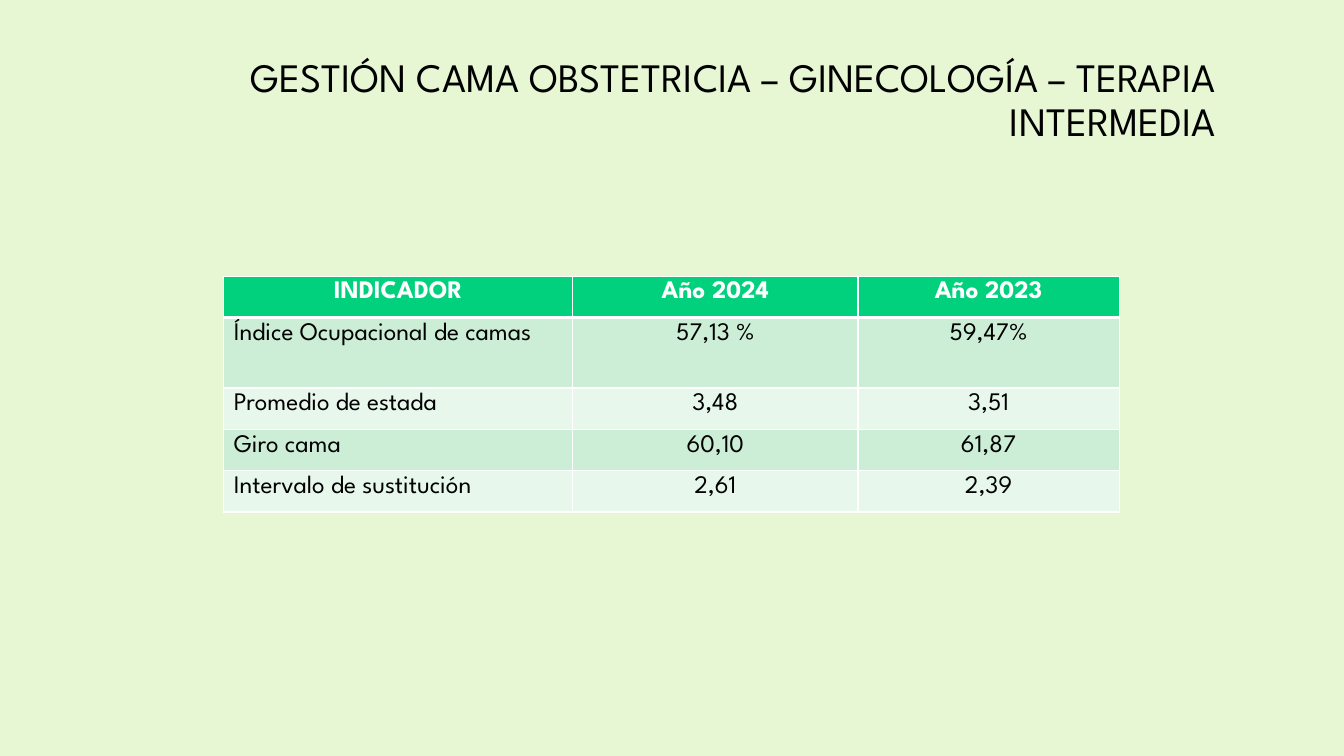
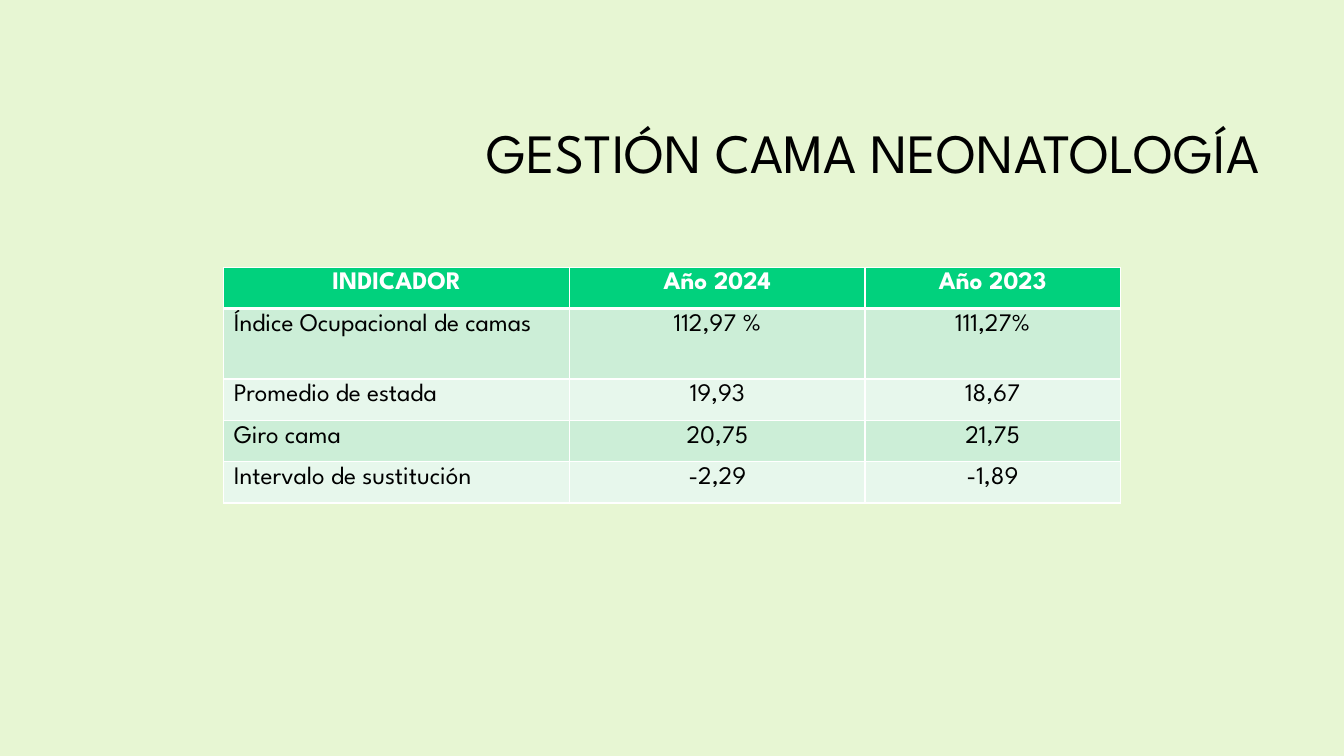
from lxml import etree
from pptx import Presentation
from pptx.dml.color import RGBColor
from pptx.enum.text import MSO_ANCHOR, MSO_AUTO_SIZE, PP_ALIGN
from pptx.oxml.ns import qn
from pptx.util import Inches, Pt

LEFT, CENTER, RIGHT = PP_ALIGN.LEFT, PP_ALIGN.CENTER, PP_ALIGN.RIGHT
MIDDLE = MSO_ANCHOR.MIDDLE
NO_AUTOFIT = MSO_AUTO_SIZE.NONE
TITLE_ONLY = 5

FONT = "League Spartan"
BACKGROUND = "E7F6D3"
HEADER = "01D17D"
BANDS = ("CCEED7", "E7F7EC")
WHITE = "FFFFFF"
BLACK = "000000"

YEARS = ("Año 2024", "Año 2023")
INDICATORS = (
    "Índice Ocupacional de camas",
    "Promedio de estada",
    "Giro cama",
    "Intervalo de sustitución",
)
ROW_HEIGHTS = (0.41, 0.7, 0.41, 0.41, 0.41)
TABLE_LEFT = 2.22


def color(hex_code):
    return RGBColor.from_string(hex_code)


def write(frame, text, size=18, ink=BLACK, bold=False, align=LEFT, spacing=None):
    paragraph = frame.paragraphs[0]
    paragraph.alignment = align
    paragraph.line_spacing = spacing
    run = paragraph.add_run()
    run.text = text
    run.font.name = FONT
    run.font.size = Pt(size)
    run.font.bold = bold
    run.font.color.rgb = color(ink)


def set_border(cell, side, points):
    properties = cell._tc.get_or_add_tcPr()
    line = etree.SubElement(properties, qn(f"a:ln{side}"), w=str(Pt(points)))
    fill = etree.SubElement(line, qn("a:solidFill"))
    etree.SubElement(fill, qn("a:srgbClr"), val=WHITE)


class Deck:
    def __init__(self):
        self.presentation = Presentation()
        self.presentation.slide_width = Inches(13.33)
        self.presentation.slide_height = Inches(7.5)
        self.slide = None

    def add_slide(self):
        layout = self.presentation.slide_layouts[TITLE_ONLY]
        self.slide = self.presentation.slides.add_slide(layout)
        fill = self.slide.background.fill
        fill.solid()
        fill.fore_color.rgb = color(BACKGROUND)

    def add_title(self, text, box, size):
        title = self.slide.shapes.title
        title.left, title.top, title.width, title.height = map(Inches, box)
        frame = title.text_frame
        frame.auto_size = NO_AUTOFIT
        frame.word_wrap = True
        frame.vertical_anchor = MIDDLE
        write(frame, text, size=size, align=RIGHT, spacing=0.9)

    def add_indicators(self, top, widths, values):
        rows = [("INDICADOR", *YEARS)]
        rows += [(name, *pair) for name, pair in zip(INDICATORS, values)]
        table = self.slide.shapes.add_table(
            len(rows), len(widths), Inches(TABLE_LEFT), Inches(top),
            Inches(sum(widths)), Inches(sum(ROW_HEIGHTS)),
        ).table
        for column, width in zip(table.columns, widths):
            column.width = Inches(width)
        for row, height in zip(table.rows, ROW_HEIGHTS):
            row.height = Inches(height)
        for row_index, texts in enumerate(rows):
            for column_index, text in enumerate(texts):
                self.fill_cell(table.cell(row_index, column_index), text,
                               row_index, column_index)

    def fill_cell(self, cell, text, row, column):
        is_header = row == 0
        borders = {"L": 1, "R": 1, "T": 3 if row == 1 else 1, "B": 3 if is_header else 1}
        for side, points in borders.items():
            set_border(cell, side, points)
        cell.fill.solid()
        cell.fill.fore_color.rgb = color(HEADER if is_header else BANDS[(row - 1) % 2])
        write(cell.text_frame, text, ink=WHITE if is_header else BLACK, bold=is_header,
              align=CENTER if is_header or column else LEFT)


def main():
    deck = Deck()

    deck.add_slide()
    deck.add_title("GESTIÓN CAMA OBSTETRICIA – GINECOLOGÍA – TERAPIA INTERMEDIA",
                   (1.16, 0.53, 11, 0.95), 28.8)
    deck.add_indicators(2.74, (3.46, 2.83, 2.59), (
        ("57,13 %", "59,47%"),
        ("3,48", "3,51"),
        ("60,10", "61,87"),
        ("2,61", "2,39"),
    ))

    deck.add_slide()
    deck.add_title("GESTIÓN CAMA NEONATOLOGÍA", (3.17, 0.84, 9.42, 1.41), 39.6)
    deck.add_indicators(2.65, (3.43, 2.93, 2.53), (
        ("112,97 %", "111,27%"),
        ("19,93", "18,67"),
        ("20,75", "21,75"),
        ("-2,29", "-1,89"),
    ))

    deck.presentation.save("out.pptx")


if __name__ == "__main__":
    main()
